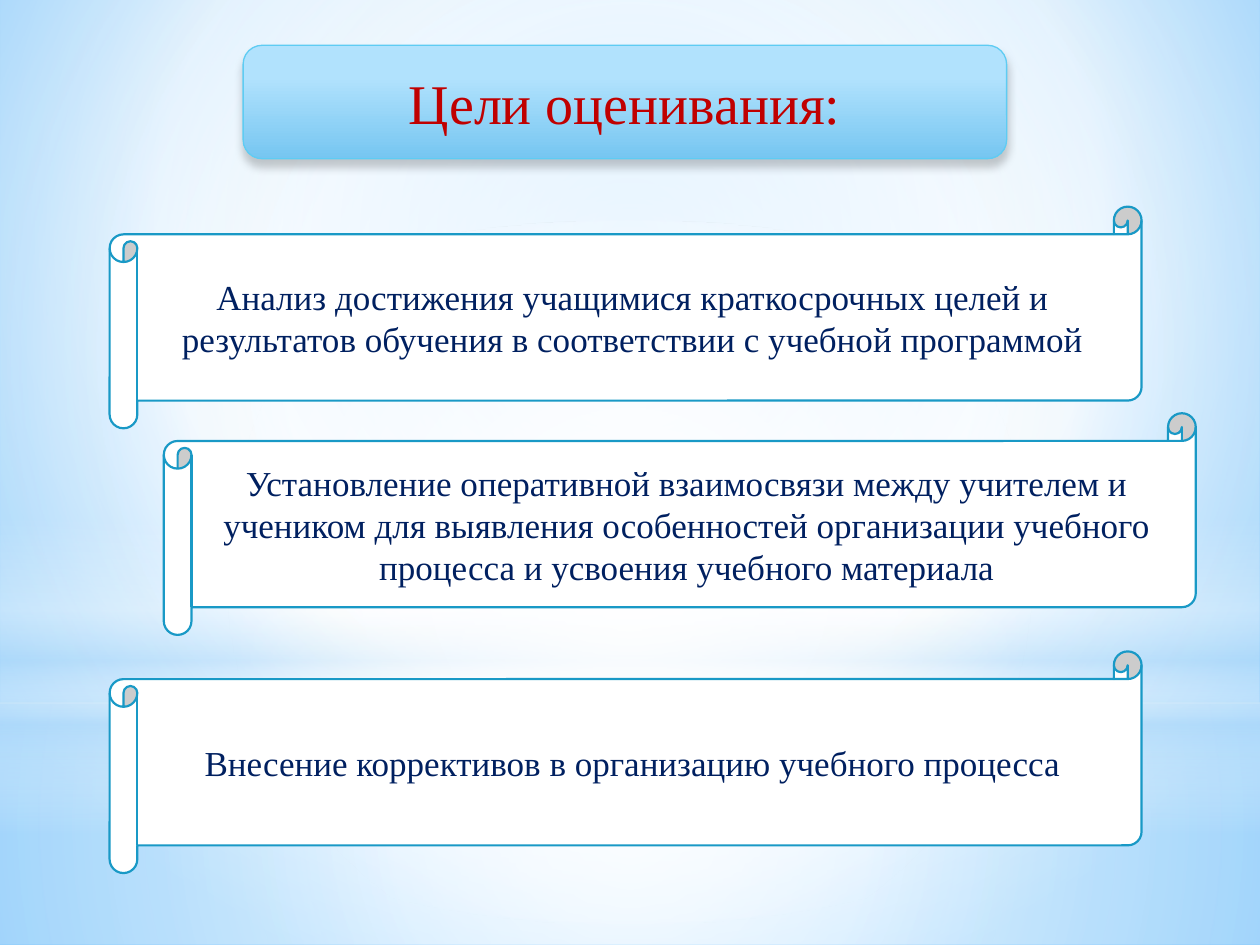
from dataclasses import dataclass
from typing import Optional

from lxml.etree import SubElement
from pptx import Presentation
from pptx.dml.color import RGBColor
from pptx.enum.shapes import MSO_SHAPE as Preset
from pptx.enum.text import MSO_ANCHOR as Anchor, PP_ALIGN as Align
from pptx.oxml.ns import qn
from pptx.util import Inches, Pt

FONT = "Times New Roman"
CENTRE = (50, 50, 50, 50)
SCROLL_SIZE = (8.19, 1.76)
TITLE_BOX = (1.93, 0.36, 6.06, 0.9)


@dataclass
class Stop:
    position: int
    color: str
    opacity: int = 100


@dataclass
class Gradient:
    """Circular around the focus insets, or linear at the angle without them."""
    stops: list[Stop]
    focus: Optional[tuple[int, int, int, int]] = None
    angle: int = 90


@dataclass
class Layer:
    preset: Preset
    top: float
    height: float
    gradient: Gradient


@dataclass
class Goal:
    left: float
    top: float
    text: str


BACKDROP = Gradient(
    [Stop(0, "9ED5FF"), Stop(60, "FFFFFF"), Stop(100, "5BB9FF")], (20, 10, 20, 60))
LAYERS = [
    Layer(Preset.RECTANGLE, 5.58, 1.92, Gradient(
        [Stop(0, "FFFFFF", 91), Stop(37, "FFFFFF", 76), Stop(100, "B4DCFA", 79)], CENTRE)),
    Layer(Preset.RECTANGLE, 0, 5.58, Gradient(
        [Stop(0, "FFFFFF", 89), Stop(48, "FFFFFF", 62), Stop(100, "B4DCFA", 79)], CENTRE)),
    Layer(Preset.RECTANGLE, 4.12, 2.5, Gradient(
        [Stop(0, "FFFFFF", 0), Stop(29, "FFFFFF", 30), Stop(45, "B4DCFA", 40),
         Stop(55, "FFFFFF", 26), Stop(65, "B4DCFA", 60), Stop(100, "FFFFFF", 0)])),
    Layer(Preset.OVAL, 1.75, 5.58, Gradient(
        [Stop(0, "FFFFFF"), Stop(56, "FFFFFF", 0)], CENTRE)),
]
TITLE_GRADIENT = Gradient([Stop(28, "B1E2FD"), Stop(100, "76C6F1")])
GOALS = [
    Goal(0.87, 1.64, "Анализ достижения учащимися краткосрочных целей и "
                     "результатов обучения в соответствии с учебной программой"),
    Goal(1.3, 3.28, "Установление оперативной взаимосвязи между учителем и "
                    "учеником для выявления особенностей организации учебного "
                    "процесса и усвоения учебного материала"),
    Goal(0.87, 5.17, "Внесение коррективов в организацию учебного процесса"),
]


def rgb(color: str) -> RGBColor:
    return RGBColor.from_string(color)


def apply_gradient(fill, owner, gradient: Gradient) -> None:
    """Give the fill, held in the owner element, a gradient with opacities."""
    fill.solid()
    solid = next(owner.iter(qn("a:solidFill")))
    grad = SubElement(owner, qn("a:gradFill"), rotWithShape="1")
    solid.getparent().replace(solid, grad)
    stop_list = SubElement(grad, qn("a:gsLst"))
    for stop in gradient.stops:
        mark = SubElement(stop_list, qn("a:gs"), pos=str(stop.position * 1000))
        color = SubElement(mark, qn("a:srgbClr"), val=stop.color)
        if stop.opacity < 100:
            SubElement(color, qn("a:alpha"), val=str(stop.opacity * 1000))
    if gradient.focus:
        circle = SubElement(grad, qn("a:path"), path="circle")
        insets = {side: str(inset * 1000) for side, inset in zip("ltrb", gradient.focus)}
        SubElement(circle, qn("a:fillToRect"), **insets)
    else:
        SubElement(grad, qn("a:lin"), ang=str(gradient.angle * 60000), scaled="0")


def add_preset(slide, preset: Preset, box: tuple[float, ...],
               line: Optional[str] = None, width: float = 1):
    shape = slide.shapes.add_shape(preset, *map(Inches, box))
    shape.shadow.inherit = False
    if line:
        shape.line.color.rgb = rgb(line)
        shape.line.width = Pt(width)
    else:
        shape.line.fill.background()
    return shape


def write_centred(shape, text: str, size: float, color: str) -> None:
    frame = shape.text_frame
    frame.text = text
    frame.word_wrap = True
    frame.vertical_anchor = Anchor.MIDDLE
    paragraph = frame.paragraphs[0]
    paragraph.alignment = Align.CENTER
    font = paragraph.runs[0].font
    font.name, font.size, font.color.rgb = FONT, Pt(size), rgb(color)


def draw_layer(slide, layer: Layer) -> None:
    shape = add_preset(slide, layer.preset, (0, layer.top, 10, layer.height))
    apply_gradient(shape.fill, shape._element.spPr, layer.gradient)


def draw_title(slide) -> None:
    panel = add_preset(slide, Preset.ROUNDED_RECTANGLE, TITLE_BOX, "5ECCF3", 0.75)
    properties = panel._element.spPr
    apply_gradient(panel.fill, properties, TITLE_GRADIENT)
    shadow = SubElement(properties.find(qn("a:effectLst")), qn("a:outerShdw"),
                        blurRad=str(Pt(5)), dist=str(Pt(4)), dir=str(90 * 60000),
                        rotWithShape="0")
    shade = SubElement(shadow, qn("a:srgbClr"), val="000000")
    SubElement(shade, qn("a:alpha"), val="20000")

    title = slide.shapes.title
    title.left, title.top, title.width, title.height = map(Inches, TITLE_BOX)
    write_centred(title, "Цели оценивания:", 32, "C00000")
    panel._element.addnext(title._element)


def draw_goal(slide, goal: Goal) -> None:
    scroll = add_preset(slide, Preset.HORIZONTAL_SCROLL,
                        (goal.left, goal.top, *SCROLL_SIZE), "1999C6", 1.25)
    scroll.fill.solid()
    scroll.fill.fore_color.rgb = rgb("FFFFFF")
    write_centred(scroll, goal.text, 20, "002060")


def main() -> None:
    deck = Presentation()
    deck.slide_width, deck.slide_height = Inches(10), Inches(7.5)
    slide = deck.slides.add_slide(deck.slide_layouts[5])
    backdrop = slide.background.fill
    apply_gradient(backdrop, slide._element.find(".//" + qn("p:bgPr")), BACKDROP)
    for layer in LAYERS:
        draw_layer(slide, layer)
    draw_title(slide)
    for goal in GOALS:
        draw_goal(slide, goal)
    deck.save("out.pptx")


if __name__ == "__main__":
    main()
